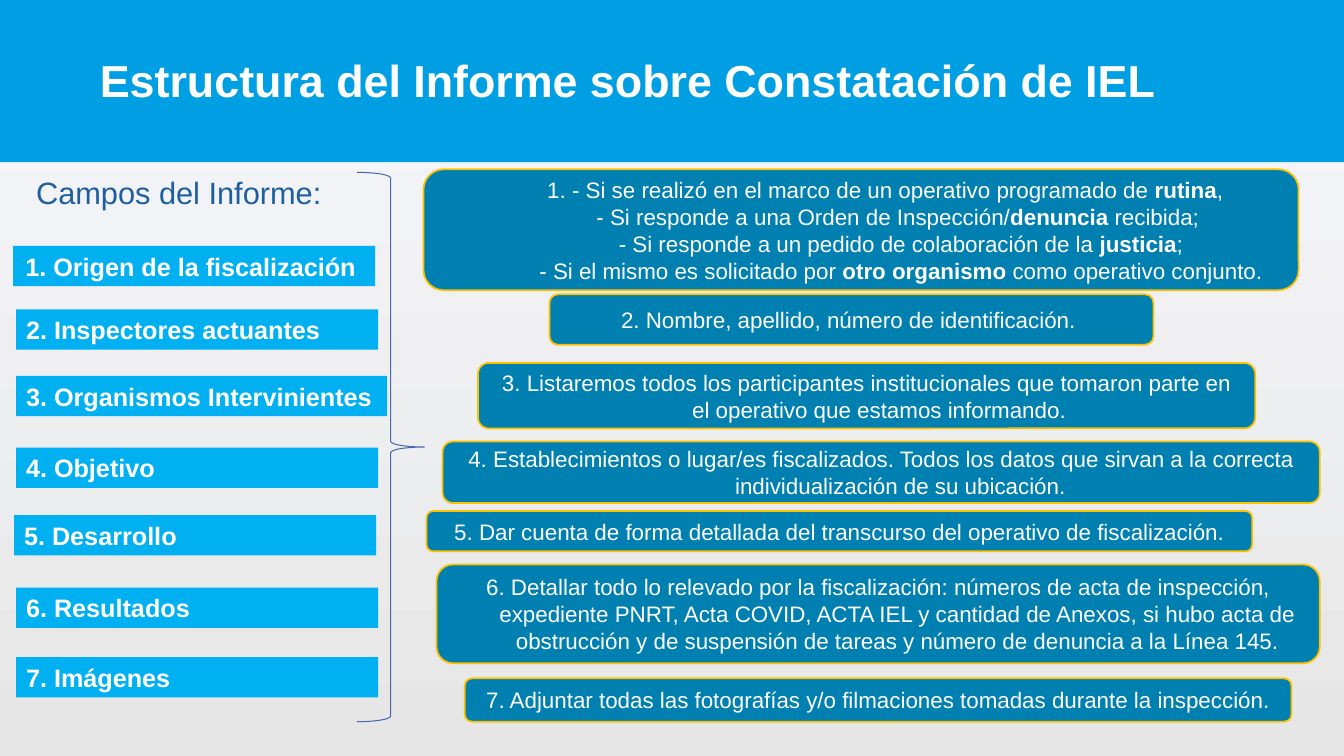
from pptx import Presentation
from pptx import util as u
from pptx.dml.color import RGBColor
from pptx.enum import shapes, text

PX = 9144


def px(n):
    return u.Emu(n * PX)


def rgb(value):
    return RGBColor.from_string(value)


class Deck:
    font = "Arial"
    white = "FFFFFF"
    banner_blue = "009FE3"
    label_blue = "00B0F0"
    detail_blue = "007FB1"
    gold = "FFC000"

    def __init__(self, width, height):
        self.prs = Presentation()
        self.prs.slide_width, self.prs.slide_height = px(width), px(height)
        self.s = self.prs.slides.add_slide(self.prs.slide_layouts[5])

    def background(self, *stops):
        fill = self.s.background.fill
        fill.gradient()
        fill.gradient_angle = 270
        for stop, (position, color) in zip(fill.gradient_stops, stops):
            stop.position = position
            stop.color.rgb = rgb(color)

    def add_runs(self, p, content, size, color, bold=False, align=text.PP_ALIGN.LEFT):
        p.alignment = align
        for i, part in enumerate(content.split("*")):
            if part:
                r = p.add_run()
                r.text = part
                r.font.name, r.font.size = self.font, u.Pt(size)
                r.font.bold = bold or i % 2 == 1
                r.font.color.rgb = rgb(color)

    def frame(self, sp, anchor):
        tf = sp.text_frame
        tf.word_wrap = True
        tf.auto_size = text.MSO_AUTO_SIZE.NONE
        tf.vertical_anchor = anchor
        return tf

    def shape(self, kind, box, fill=None, line=None, weight=1):
        sp = self.s.shapes.add_shape(kind, *map(px, box))
        sp.shadow.inherit = False
        if fill:
            sp.fill.solid()
            sp.fill.fore_color.rgb = rgb(fill)
        else:
            sp.fill.background()
        if line:
            sp.line.color.rgb = rgb(line)
            sp.line.width = u.Pt(weight)
        else:
            sp.line.fill.background()
        return sp

    def title(self, content, box, banner):
        sp = self.s.shapes.title
        sp.left, sp.top, sp.width, sp.height = map(px, box)
        tf = self.frame(sp, text.MSO_ANCHOR.MIDDLE)
        self.add_runs(tf.paragraphs[0], content, 32, "FEFEFE", True)
        band = self.shape(shapes.MSO_SHAPE.RECTANGLE, banner, self.banner_blue)
        sp.element.addprevious(band.element)

    def heading(self, content, box):
        sp = self.s.shapes.add_textbox(*map(px, box))
        tf = self.frame(sp, text.MSO_ANCHOR.TOP)
        self.add_runs(tf.paragraphs[0], content, 22, "1F5FA0")

    def brace(self, box):
        self.shape(shapes.MSO_SHAPE.RIGHT_BRACE, box, line="4A66AC", weight=0.75)

    def label(self, content, box, align=text.PP_ALIGN.LEFT):
        sp = self.shape(shapes.MSO_SHAPE.RECTANGLE, box, self.label_blue)
        tf = self.frame(sp, text.MSO_ANCHOR.TOP)
        self.add_runs(tf.paragraphs[0], content, 18, self.white, True, align)

    def detail(self, lines, box, insets=(10, 5, 10, 5)):
        sp = self.shape(shapes.MSO_SHAPE.ROUNDED_RECTANGLE, box,
                        self.detail_blue, self.gold, 1.25)
        tf = self.frame(sp, text.MSO_ANCHOR.MIDDLE)
        (tf.margin_left, tf.margin_top,
         tf.margin_right, tf.margin_bottom) = map(px, insets)
        for i, (content, margin, indent) in enumerate(lines):
            p = tf.add_paragraph() if i else tf.paragraphs[0]
            pPr = p._p.get_or_add_pPr()
            pPr.set("marL", str(px(margin)))
            pPr.set("indent", str(px(indent)))
            self.add_runs(p, content, 16, self.white, align=text.PP_ALIGN.CENTER)


LABELS = [
    ("1. Origen de la fiscalización ", 13, 244, 359, text.PP_ALIGN.CENTER),
    ("2. Inspectores actuantes", 16, 307, 359, text.PP_ALIGN.LEFT),
    ("3. Organismos Intervinientes", 16, 373, 368, text.PP_ALIGN.LEFT),
    ("4. Objetivo", 16, 444, 359, text.PP_ALIGN.LEFT),
    ("5. Desarrollo", 14, 511, 359, text.PP_ALIGN.LEFT),
    ("6. Resultados", 16, 583, 359, text.PP_ALIGN.LEFT),
    ("7. Imágenes", 16, 652, 359, text.PP_ALIGN.LEFT),
]

ORIGIN = [
    ("1. - Si se realizó en el marco de un operativo programado de* rutina*, ", 88, -38),
    ("- Si responde a una Orden de Inspección/*denuncia* recibida; ", 113, -38),
    ("- Si responde a un pedido de colaboración de la *justicia*;", 113, -38),
    ("- Si el mismo es solicitado por *otro organismo* como operativo conjunto.", 113, -38),
]

DETAILS = [
    ([("2. Nombre, apellido, número de identificación. ", 0, 0)],
     (545, 292, 599, 50)),
    ([("3. Listaremos todos los participantes institucionales que tomaron parte en", 0, 0),
      ("el operativo que estamos informando. ", 31, 0)],
     (474, 360, 771, 65)),
    ([("4. Establecimientos o lugar/es fiscalizados. Todos los datos que sirvan "
       "a la correcta individualización de su ubicación.", 38, -38)],
     (439, 438, 870, 61)),
    ([("5. Dar cuenta de forma detallada del transcurso del operativo de "
       "fiscalización.", 38, -38)],
     (423, 507, 819, 40)),
    ([("6. Detallar todo lo relevado por la fiscalización: números de acta de "
       "inspección, expediente PNRT, Acta COVID, ACTA IEL y cantidad de Anexos, "
       "si hubo acta de obstrucción y de suspensión de tareas y número de "
       "denuncia a la Línea 145.", 38, -38)],
     (433, 560, 876, 98)),
    ([("7. Adjuntar todas las fotografías y/o filmaciones tomadas durante la "
       "inspección.", 38, -38)],
     (461, 673, 820, 43)),
]


def main():
    deck = Deck(1333, 750)
    deck.background((0.03, "F6F7FB"), (1, "E6E6E6"))
    deck.title("Estructura del Informe sobre Constatación de IEL",
               (89, 26, 1156, 106), (0, 0, 1333, 161))
    deck.brace((354, 171, 67, 545))
    deck.heading("Campos del Informe:", (26, 167, 610, 44))
    for content, left, top, width, align in LABELS:
        deck.label(content, (left, top, width, 40), align)
    for lines, box in DETAILS:
        deck.detail(lines, box)
    deck.detail(ORIGIN, (420, 168, 868, 120), (8, 4, 4, 4))
    deck.prs.save("out.pptx")


if __name__ == "__main__":
    main()
